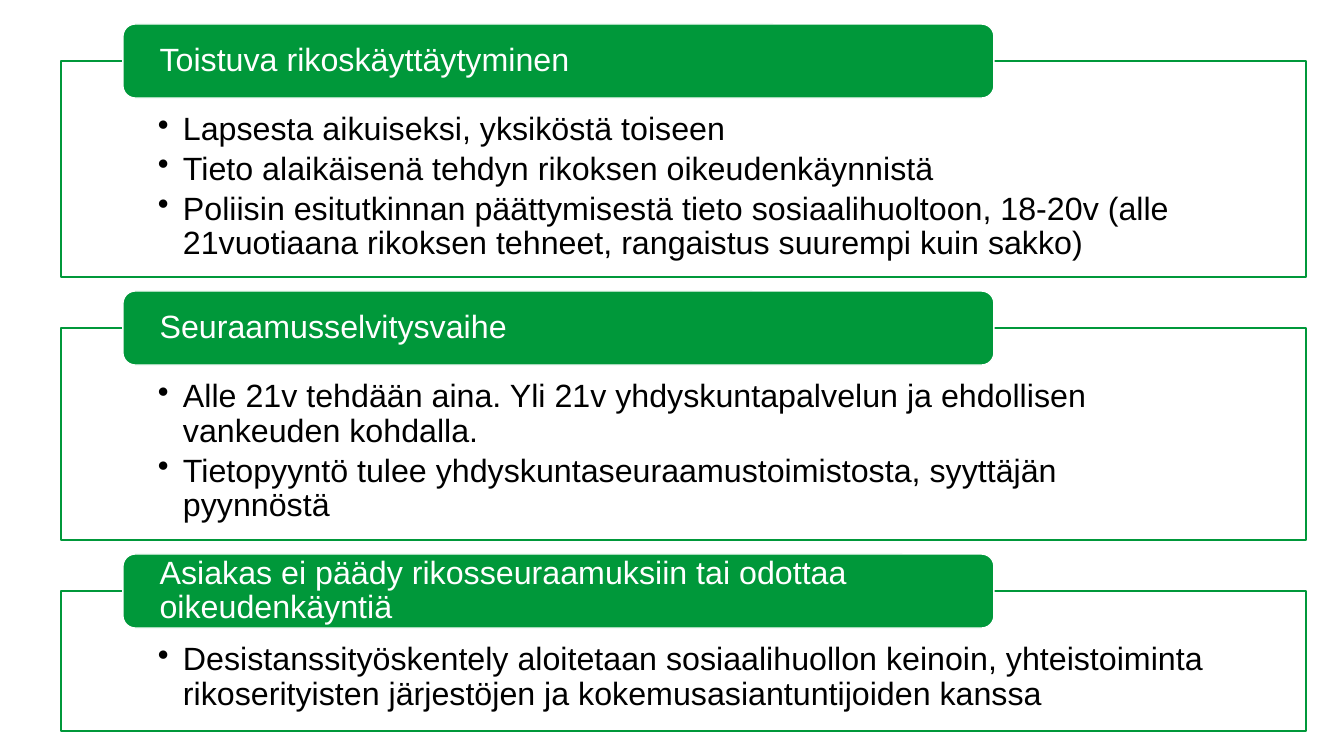
from lxml import etree
from pptx import Presentation
from pptx import util as u
from pptx.dml.color import RGBColor
from pptx.enum import shapes, text
from pptx.oxml.ns import qn

# Content: heading, frame height in px, bullet points
STAGES = [
    ("Toistuva rikoskäyttäytyminen", 216, [
        "Lapsesta aikuiseksi, yksiköstä toiseen",
        "Tieto alaikäisenä tehdyn rikoksen oikeudenkäynnistä",
        "Poliisin esitutkinnan päättymisestä tieto sosiaalihuoltoon, 18-20v "
        "(alle 21vuotiaana rikoksen tehneet, rangaistus suurempi kuin sakko)",
    ]),
    ("Seuraamusselvitysvaihe", 212, [
        "Alle 21v tehdään aina. Yli 21v yhdyskuntapalvelun ja ehdollisen "
        "vankeuden kohdalla.",
        "Tietopyyntö tulee yhdyskuntaseuraamustoimistosta, syyttäjän pyynnöstä",
    ]),
    ("Asiakas ei päädy rikosseuraamuksiin tai odottaa oikeudenkäyntiä", 140, [
        "Desistanssityöskentely aloitetaan sosiaalihuollon keinoin, yhteistoiminta "
        "rikoserityisten järjestöjen ja kokemusasiantuntijoiden kanssa",
    ]),
]

GREEN = RGBColor(0x00, 0x98, 0x3A)
WHITE = RGBColor(0xFF, 0xFF, 0xFF)
BLACK = RGBColor(0x00, 0x00, 0x00)

# Layout in px
WIDE, HIGH = 1344, 756
TOP, GAP = 61, 51
FRAME_X, FRAME_W = 61, 1245
TAB_X, TAB_W, TAB_H = 123, 871, 74
INDENT = 25


def px(n):
    return u.Emu(round(n * 914400 / 100.8))


def add_box(slide, kind, place, fill, edge, insets, anchor):
    box = slide.shapes.add_shape(kind, *map(px, place))
    box.shadow.inherit = False
    box.fill.solid()
    box.fill.fore_color.rgb = fill
    box.line.color.rgb = edge
    box.line.width = u.Pt(1)
    frame = box.text_frame
    frame.word_wrap = True
    frame.vertical_anchor = anchor
    (frame.margin_left, frame.margin_top,
     frame.margin_right, frame.margin_bottom) = map(px, insets)
    return frame


def add_text(para, words, color):
    para.alignment = text.PP_ALIGN.LEFT
    para.line_spacing = 0.9
    run = para.add_run()
    run.text = words
    run.font.name = "Arial"
    run.font.size = u.Pt(23)
    run.font.color.rgb = color


def add_bullet(para):
    props = para._p.get_or_add_pPr()
    props.set("marL", str(px(INDENT)))
    props.set("indent", str(-px(INDENT)))
    etree.SubElement(props, qn("a:buChar")).set("char", "•")
    para.level = 1
    para.space_after = u.Pt(3.5)


def main():
    deck = Presentation()
    deck.slide_width, deck.slide_height = px(WIDE), px(HIGH)
    slide = deck.slides.add_slide(deck.slide_layouts[6])

    top = TOP
    for title, height, points in STAGES:
        # Outlined frame with bullets
        body = add_box(slide, shapes.MSO_SHAPE.RECTANGLE,
                       (FRAME_X, top, FRAME_W, height), WHITE, GREEN,
                       (97, 52, 97, 18), text.MSO_ANCHOR.TOP)
        for i, point in enumerate(points):
            para = body.add_paragraph() if i else body.paragraphs[0]
            add_bullet(para)
            add_text(para, point, BLACK)

        # Heading tab centred on the frame's top edge
        head = add_box(slide, shapes.MSO_SHAPE.ROUNDED_RECTANGLE,
                       (TAB_X, top - TAB_H / 2, TAB_W, TAB_H), GREEN, WHITE,
                       (33, 0, 33, 0), text.MSO_ANCHOR.MIDDLE)
        add_text(head.paragraphs[0], title, WHITE)
        top += height + GAP

    deck.save("out.pptx")


if __name__ == "__main__":
    main()
